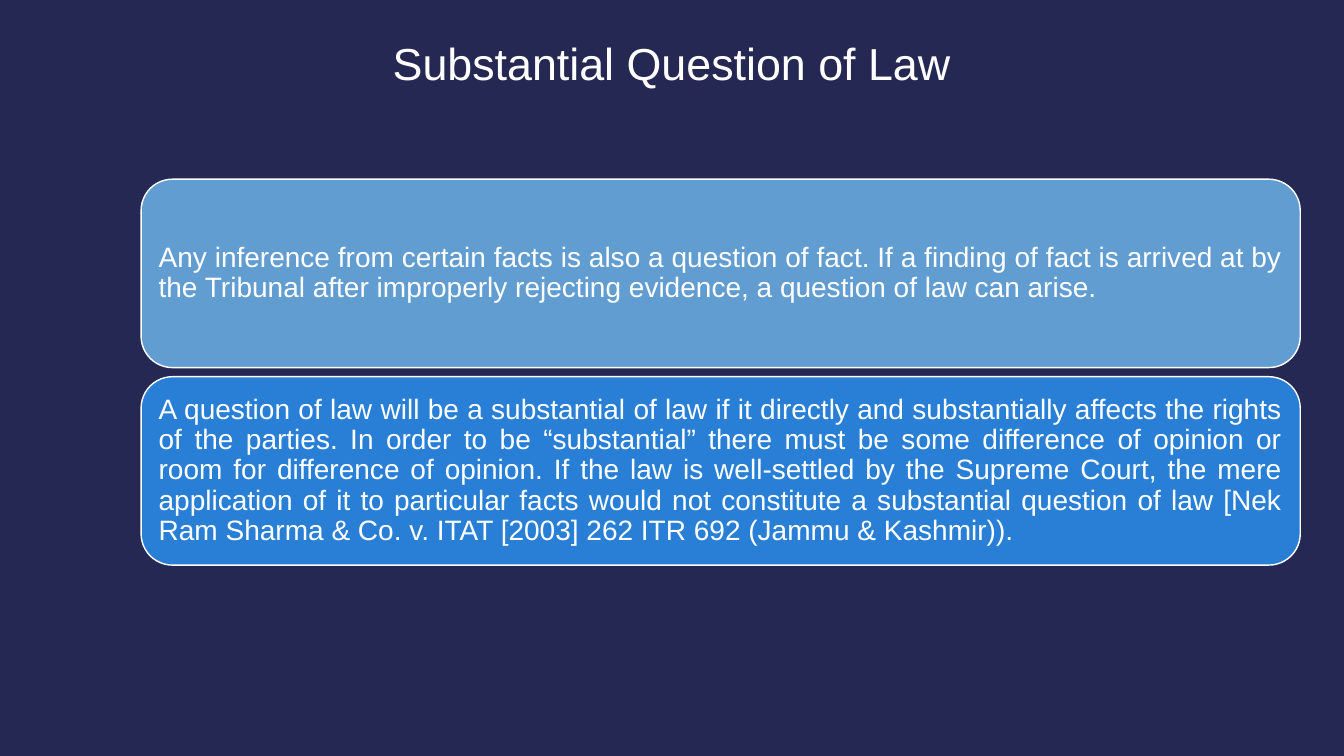
"""Build the slide on substantial questions of law."""
from pptx import Presentation
from pptx.dml.color import RGBColor
from pptx.enum.shapes import MSO_SHAPE
from pptx.enum.text import MSO_ANCHOR, PP_ALIGN
from pptx.util import Pt


def color(value):
    return RGBColor.from_string(value)


def format_text(text_frame, alignment, size):
    text_frame.word_wrap = True
    text_frame.vertical_anchor = MSO_ANCHOR.MIDDLE
    paragraph = text_frame.paragraphs[0]
    paragraph.alignment = alignment
    paragraph.line_spacing = 0.9
    font = paragraph.runs[0].font
    font.name = "Arial"
    font.size = Pt(size)
    font.color.rgb = color("FFFFFF")


presentation = Presentation()
presentation.slide_width = Pt(960)
presentation.slide_height = Pt(540)
slide = presentation.slides.add_slide(presentation.slide_layouts[5])
slide.background.fill.solid()
slide.background.fill.fore_color.rgb = color("242852")

title = slide.shapes.title
title.left, title.top, title.width, title.height = Pt(66), Pt(-6), Pt(828), Pt(106.5)
title.text_frame.text = "Substantial Question of Law"
format_text(title.text_frame, PP_ALIGN.CENTER, 32)

statements = [
    ("629DD1", "Any inference from certain facts is also a question of fact. If a finding of "
     "fact is arrived at by the Tribunal after improperly rejecting evidence, a question of "
     "law can arise."),
    ("297FD5", "A question of law will be a substantial of law if it directly and substantially "
     "affects the rights of the parties. In order to be “substantial” there must be some "
     "difference of opinion or room for difference of opinion. If the law is well-settled by "
     "the Supreme Court, the mere application of it to particular facts would not constitute "
     "a substantial question of law [Nek Ram Sharma & Co. v. ITAT [2003] 262 ITR 692 "
     "(Jammu & Kashmir))."),
]
panel_top, panel_height, panel_gap = 128, 134.6, 6.5

for index, (fill, statement) in enumerate(statements):
    top = panel_top + index * (panel_height + panel_gap)
    panel = slide.shapes.add_shape(
        MSO_SHAPE.ROUNDED_RECTANGLE, Pt(100.8), Pt(top), Pt(828), Pt(panel_height))
    panel.shadow.inherit = False
    panel.fill.solid()
    panel.fill.fore_color.rgb = color(fill)
    panel.line.color.rgb = color("FFFFFF")
    panel.line.width = Pt(1)
    text_frame = panel.text_frame
    text_frame.margin_left = text_frame.margin_right = Pt(6)
    text_frame.margin_top = text_frame.margin_bottom = Pt(6)
    text_frame.text = statement
    format_text(text_frame, PP_ALIGN.JUSTIFY, 20)

presentation.save("out.pptx")
